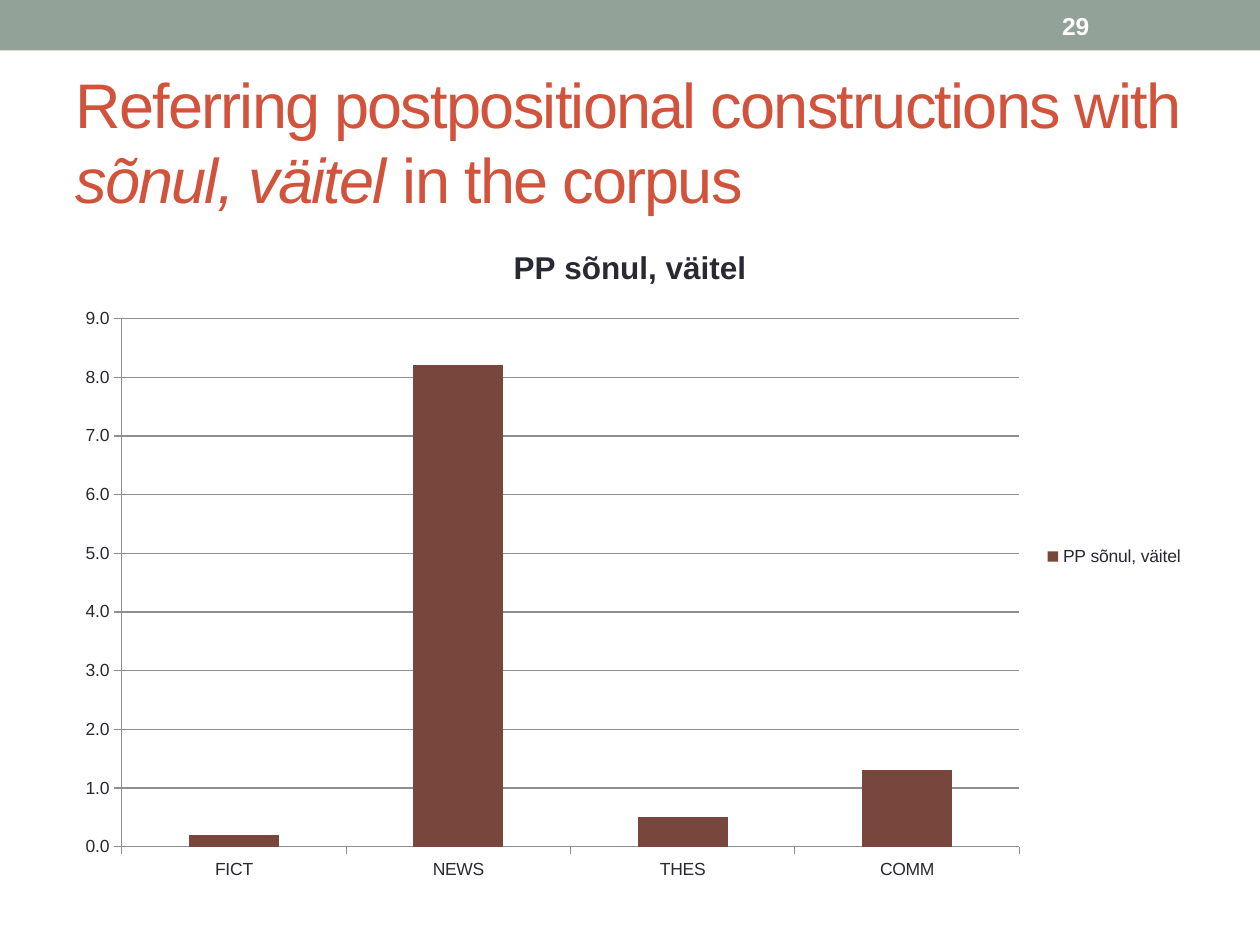
from dataclasses import dataclass

from pptx import Presentation
from pptx.chart.data import CategoryChartData
from pptx.dml.color import RGBColor
from pptx.enum.chart import XL_CHART_TYPE, XL_LEGEND_POSITION, XL_TICK_MARK
from pptx.enum.shapes import MSO_SHAPE
from pptx.enum.text import MSO_ANCHOR
from pptx.util import Cm, Pt

COLUMN = XL_CHART_TYPE.COLUMN_CLUSTERED
LEGEND_RIGHT = XL_LEGEND_POSITION.RIGHT
TICK_OUTSIDE = XL_TICK_MARK.OUTSIDE
TICK_NONE = XL_TICK_MARK.NONE
RECTANGLE = MSO_SHAPE.RECTANGLE
MIDDLE = MSO_ANCHOR.MIDDLE


@dataclass(frozen=True)
class Theme:
    """Colours and type sizes of the slide."""
    font: str = "Arial"
    banner: RGBColor = RGBColor(0x93, 0xA2, 0x99)
    heading: RGBColor = RGBColor(0xD2, 0x53, 0x3C)
    ink: RGBColor = RGBColor(0x29, 0x29, 0x34)
    rule: RGBColor = RGBColor(0x8E, 0x8E, 0x90)
    column: RGBColor = RGBColor(0x79, 0x46, 0x3D)
    white: RGBColor = RGBColor(0xFF, 0xFF, 0xFF)
    heading_size: Pt = Pt(36)
    chart_title_size: Pt = Pt(18)
    number_size: Pt = Pt(14)
    label_size: Pt = Pt(10)
    rule_width: Pt = Pt(0.75)


THEME = Theme()


def set_font(font, color, **formats):
    """Apply the theme typeface, a colour and further font formats."""
    font.color.rgb = color
    for name, value in {"name": THEME.font, **formats}.items():
        setattr(font, name, value)


def set_rule(line):
    """Draw a line as a thin chart rule."""
    line.color.rgb = THEME.rule
    line.width = THEME.rule_width


def add_text_frame(slide, box):
    """Add a wrapping, vertically centred text box and return its frame."""
    frame = slide.shapes.add_textbox(*box).text_frame
    for name, value in {"word_wrap": True, "vertical_anchor": MIDDLE}.items():
        setattr(frame, name, value)
    return frame


def add_banner(slide, box, number):
    """Place the top band with the slide number near its right end."""
    left, top, width, height = box
    band = slide.shapes.add_shape(RECTANGLE, *box)
    band.shadow.inherit = False
    band.fill.solid()
    band.fill.fore_color.rgb = THEME.banner
    band.line.fill.background()
    number_box = (left + width - Cm(4.24), top + Cm(0.05), Cm(2.97), height - Cm(0.1))
    run = add_text_frame(slide, number_box).paragraphs[0].add_run()
    run.text = number
    set_font(run.font, THEME.white, size=THEME.number_size, bold=True)


def add_heading(slide, box, parts):
    """Place the heading from pairs of text and italic flag."""
    paragraph = add_text_frame(slide, box).paragraphs[0]
    for text, italic in parts:
        run = paragraph.add_run()
        run.text = text
        set_font(run.font, THEME.heading, size=THEME.heading_size, italic=italic)
        run.font._element.set("spc", "-100")


def add_column_chart(slide, box, name, values):
    """Place a single-series column chart with title and legend."""
    data = CategoryChartData(number_format="0.0")
    data.categories = list(values)
    data.add_series(name, list(values.values()))
    chart = slide.shapes.add_chart(COLUMN, *box, data).chart
    set_font(chart.font, THEME.ink, size=THEME.label_size)

    chart.has_title = True
    title = chart.chart_title.text_frame
    title.text = name
    set_font(title.paragraphs[0].runs[0].font, THEME.ink,
             size=THEME.chart_title_size, bold=True)

    chart.has_legend = True
    chart.legend.position = LEGEND_RIGHT
    chart.legend.include_in_layout = False
    set_font(chart.legend.font, THEME.ink, size=THEME.label_size)

    plot = chart.plots[0]
    plot.gap_width = 150
    plot.vary_by_categories = False
    fill = plot.series[0].format.fill
    fill.solid()
    fill.fore_color.rgb = THEME.column

    for axis in (chart.category_axis, chart.value_axis):
        axis.major_tick_mark = TICK_OUTSIDE
        axis.minor_tick_mark = TICK_NONE
        set_rule(axis.format.line)
        set_font(axis.tick_labels.font, THEME.ink, size=THEME.label_size)

    scale = {"minimum_scale": 0, "maximum_scale": 9, "major_unit": 1,
             "has_major_gridlines": True}
    for attribute, value in scale.items():
        setattr(chart.value_axis, attribute, value)
    set_rule(chart.value_axis.major_gridlines.format.line)
    chart.value_axis.tick_labels.number_format = "0.0"
    chart.value_axis.tick_labels.number_format_is_linked = False


def main():
    """Build and save the slide."""
    presentation = Presentation()
    presentation.slide_width, presentation.slide_height = Cm(25.4), Cm(19.05)
    slide = presentation.slides.add_slide(presentation.slide_layouts[6])
    margin = Cm(1.27)
    content_width = presentation.slide_width - 2 * margin

    add_banner(slide, (0, 0, presentation.slide_width, Cm(1.02)), "29")
    add_heading(slide, (margin, Cm(1.47), content_width, Cm(2.74)), [
        ("Referring postpositional constructions with ", False),
        ("sõnul, väitel", True),
        (" in the corpus", False),
    ])
    add_column_chart(slide, (margin, Cm(4.45), content_width, Cm(13.54)),
                     "PP sõnul, väitel",
                     {"FICT": 0.2, "NEWS": 8.2, "THES": 0.5, "COMM": 1.3})
    presentation.save("out.pptx")


if __name__ == "__main__":
    main()
